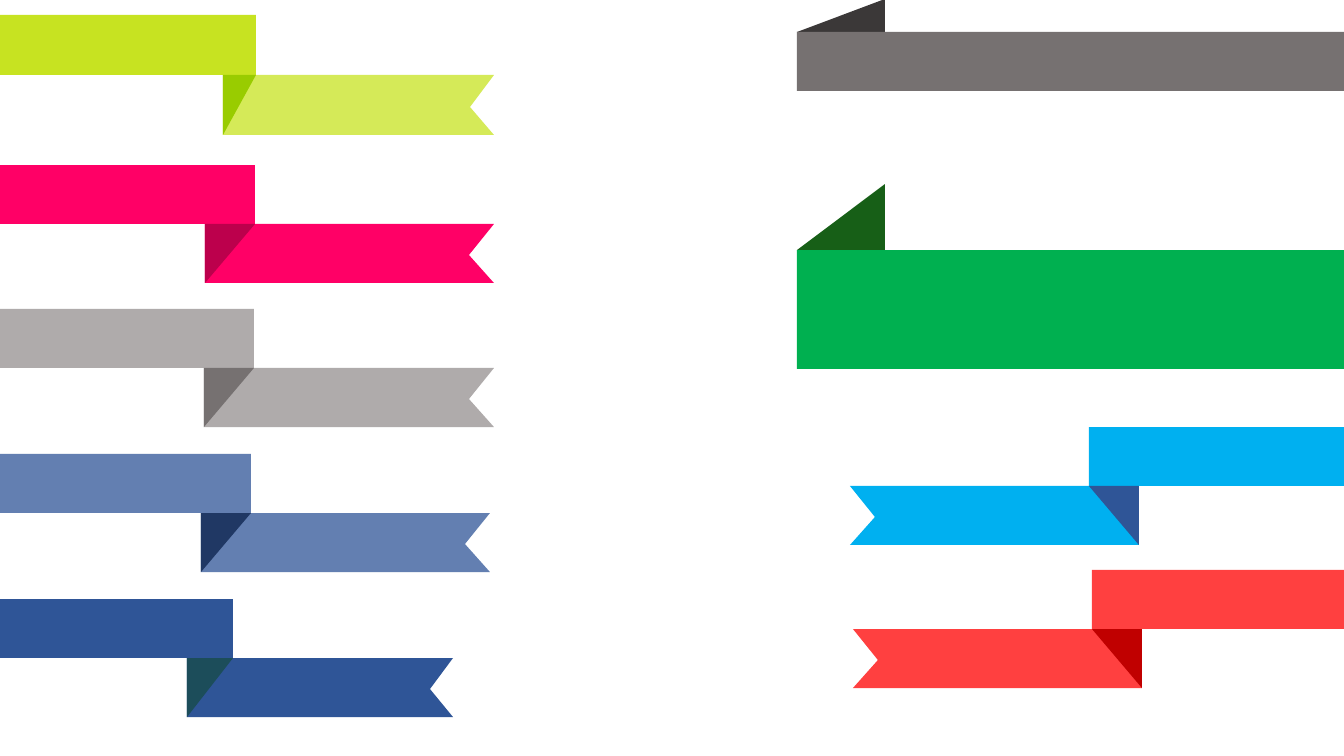
from pptx import Presentation
from pptx.dml.color import RGBColor
from pptx.enum import shapes
from pptx.oxml import ns
from lxml import etree

# Content: px positions; outer = slide-side end, edge = end of the upper band,
# back = far side of the fold, tail = swallowtail tip, notch = its depth
RIBBONS = [
    # name, outer, edge, back, tail, notch, top, height
    ("lime", 0, 256, 223, 494, 24, 15, 60),
    ("grey", -1, 254, 204, 494, 25, 309, 59),
    ("pink", 0, 255, 205, 494, 25, 165, 59),
    ("steel", -4, 251, 201, 490, 25, 454, 59),
    ("sky", 1344, 1089, 1139, 850, 25, 427, 59),
    ("red", 1347, 1092, 1142, 853, 25, 570, 59),
    ("navy", -1, 233, 187, 453, 23, 599, 59),
]
FLAGS = [
    # name, top, height, fold height
    ("stone", 32, 59, 33),
    ("green", 250, 119, 66),
]
FLAG_LEFT, FLAG_FOLD = 797, 88

# Theme: (colour, opacity %) for band, tail and fold
THEME = {
    "lime": (("C7E321", 100), ("C7E321", 75), ("99CC00", 100)),
    "grey": (("AFABAB", 100), ("AFABAB", 100), ("767171", 100)),
    "pink": (("FF0066", 100), ("FF0066", 100), ("BC004C", 100)),
    "steel": (("2F5597", 75), ("2F5597", 75), ("203864", 100)),
    "sky": (("00B0F0", 100), ("00B0F0", 100), ("2F5597", 100)),
    "red": (("FF0000", 75), ("FF0000", 75), ("C00000", 100)),
    "navy": (("2F5597", 100), ("2F5597", 100), ("1C4D5A", 100)),
    "stone": (("767171", 100), None, ("3B3838", 100)),
    "green": (("00B050", 100), None, ("175F17", 100)),
}
WIDTH, HEIGHT = 1344, 756
PX = 914400 / 100.8


def px(n):
    return round(n * PX)


def paint(sp, style):
    colour, opacity = style
    sp.shadow.inherit = False
    sp.line.fill.background()
    sp.fill.solid()
    sp.fill.fore_color.rgb = RGBColor.from_string(colour)
    if opacity < 100:
        clr = sp.fill._xPr.find(".//" + ns.qn("a:srgbClr"))
        etree.SubElement(clr, ns.qn("a:alpha")).set("val", str(opacity * 1000))


def add_band(group, x1, x2, top, height, style):
    left, right = sorted((x1, x2))
    paint(group.shapes.add_shape(shapes.MSO_SHAPE.RECTANGLE, px(left), px(top),
                                 px(right - left), px(height)), style)


def add_outline(group, points, style):
    builder = group.shapes.build_freeform(*points[0], scale=PX)
    builder.add_line_segments(points[1:], close=True)
    paint(builder.convert_to_shape(), style)


prs = Presentation()
prs.slide_width, prs.slide_height = px(WIDTH), px(HEIGHT)
s = prs.slides.add_slide(prs.slide_layouts[6])

# Folded ribbons with a swallowtail
for name, outer, edge, back, tail, notch, top, height in RIBBONS:
    band, end, fold = THEME[name]
    mid, bottom = top + height, top + 2 * height
    inward = tail - notch if tail > back else tail + notch
    group = s.shapes.add_group_shape()
    add_band(group, outer, edge, top, height, band)
    add_outline(group, [(back, mid), (tail, mid), (inward, mid + round(height * 0.53)),
                        (tail, bottom), (back, bottom)], end)
    add_outline(group, [(back, mid), (back, bottom), (edge, mid)], fold)

# Wide bands with a fold on top
for name, top, height, rise in FLAGS:
    band, _, fold = THEME[name]
    right = FLAG_LEFT + FLAG_FOLD
    group = s.shapes.add_group_shape()
    add_outline(group, [(right, top), (FLAG_LEFT, top), (right, top - rise)], fold)
    add_band(group, FLAG_LEFT, WIDTH, top, height, band)

prs.save("out.pptx")
